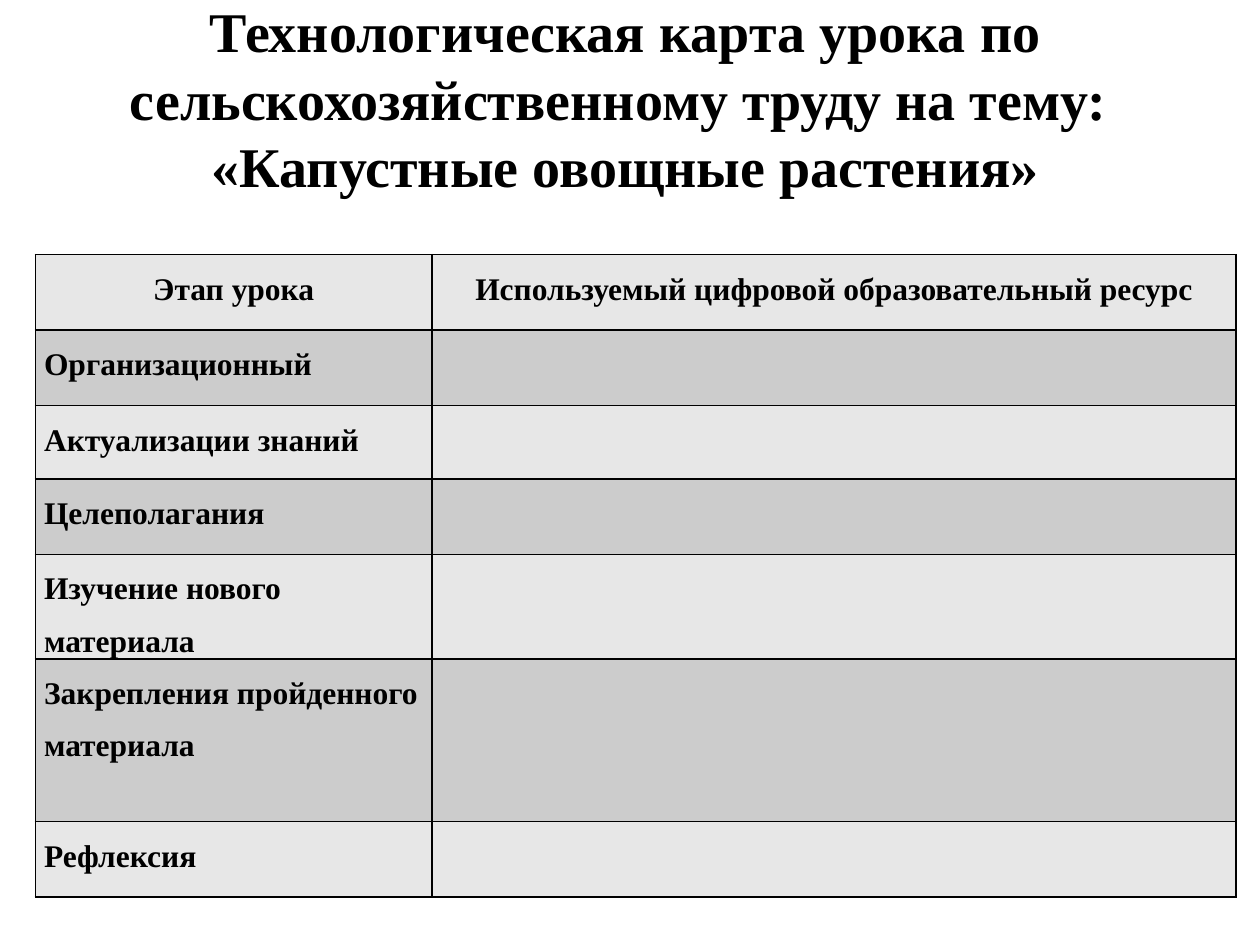
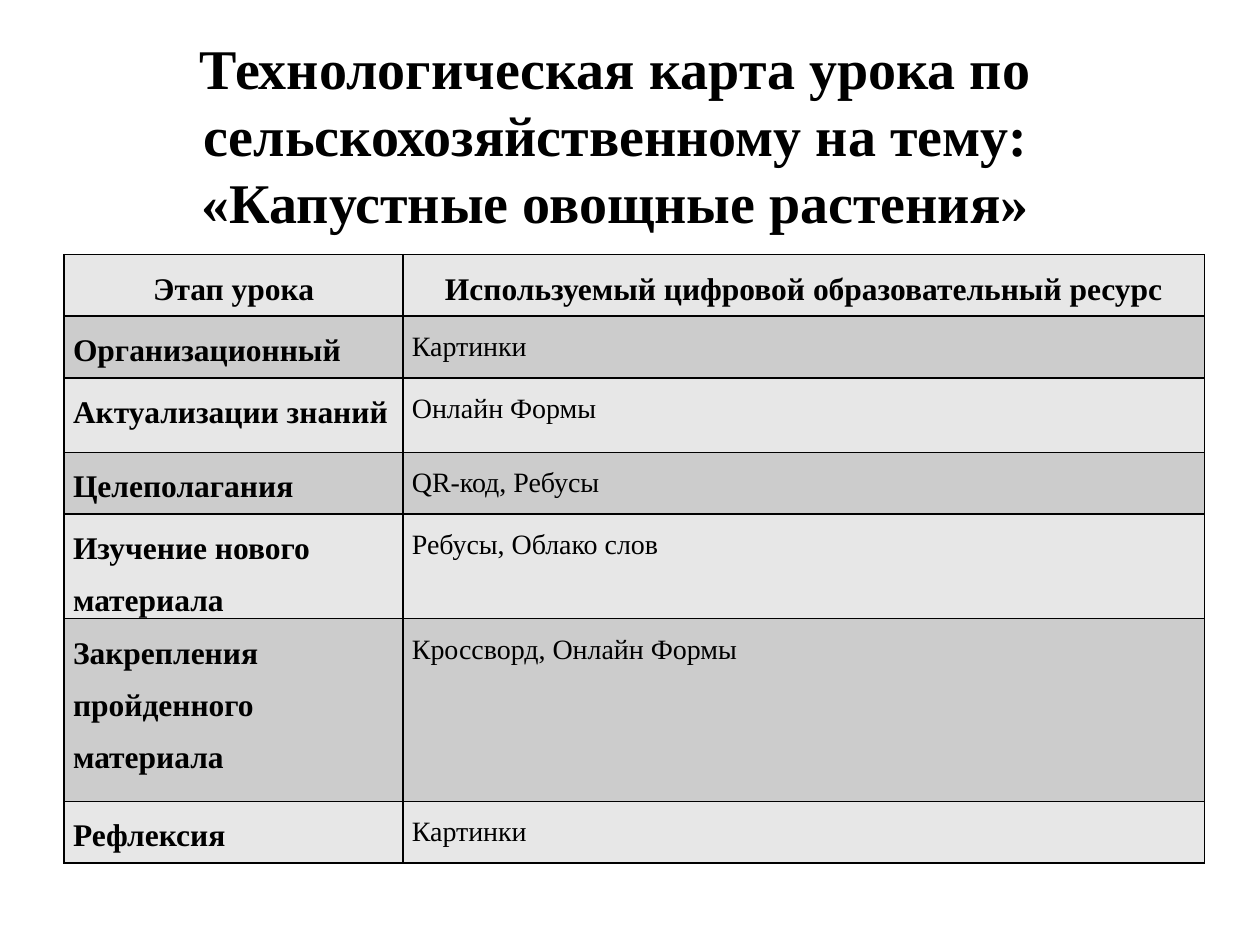
"""Build two lesson-plan slides: a blank table of stages and a completed one."""
from lxml.etree import SubElement
from pptx import Presentation
from pptx.dml.color import RGBColor
from pptx.enum.text import MSO_ANCHOR, MSO_AUTO_SIZE, PP_ALIGN
from pptx.oxml.ns import qn
from pptx.util import Inches, Pt

HEADERS = ("Этап урока", "Используемый цифровой образовательный ресурс")
STAGES = (
    "Организационный",
    "Актуализации знаний",
    "Целеполагания",
    "Изучение нового материала",
    "Закрепления пройденного материала",
    "Рефлексия",
)
SLIDES = [
    {
        "title": "Технологическая карта урока по сельскохозяйственному труду "
                 "на тему: \v«Капустные овощные растения»",
        "title_box": (0.2, 0, 9.53, 1.55),
        "table_left": 0.28,
        "columns": (3.15, 6.38),
        "rows": (0.6, 0.6, 0.58, 0.6, 0.6, 1.29, 0.6),
        "resources": ("",) * len(STAGES),
    },
    {
        "title": "Технологическая карта урока по сельскохозяйственному "
                 "на тему: «Капустные овощные растения»",
        "title_box": (0.75, 0.29, 8.27, 1.55),
        "table_left": 0.51,
        "columns": (2.69, 6.36),
        "rows": (0.49, 0.49, 0.59, 0.49, 0.49, 1.45, 0.49),
        "resources": (
            "Картинки",
            "Онлайн Формы",
            "QR-код, Ребусы",
            "Ребусы, Облако слов",
            "Кроссворд, Онлайн Формы",
            "Картинки",
        ),
    },
]
COLORS = {"text": "000000", "border": "000000", "light": "E7E7E7", "dark": "CCCCCC"}
FONT = "Times New Roman"
TABLE_TOP = 2.02


def style_text(tf, size, bold, align):
    for p in tf.paragraphs:
        p.alignment = align
        for r in p.runs:
            r.font.name = FONT
            r.font.size = Pt(size)
            r.font.bold = bold
            r.font.color.rgb = RGBColor.from_string(COLORS["text"])


def add_title(s, text, box):
    title = s.shapes.title
    title.left, title.top, title.width, title.height = map(Inches, box)
    tf = title.text_frame
    tf.text = text
    tf.word_wrap = True
    tf.auto_size = MSO_AUTO_SIZE.NONE
    tf.vertical_anchor = MSO_ANCHOR.MIDDLE
    style_text(tf, 32, True, PP_ALIGN.CENTER)


def add_borders(cell):
    tc_pr = cell._tc.get_or_add_tcPr()
    for side in ("lnL", "lnR", "lnT", "lnB"):
        line = SubElement(tc_pr, qn(f"a:{side}"), w=str(Pt(1)))
        fill = SubElement(line, qn("a:solidFill"))
        SubElement(fill, qn("a:srgbClr"), val=COLORS["border"])


def fill_cell(cell, text, row, col):
    add_borders(cell)
    cell.fill.solid()
    cell.fill.fore_color.rgb = RGBColor.from_string(COLORS["dark" if row % 2 else "light"])
    cell.margin_left = cell.margin_right = Inches(0.07)
    cell.margin_top = cell.margin_bottom = 0
    if text:
        tf = cell.text_frame
        tf.text = text
        tf.paragraphs[0].line_spacing = 1.5
        heading = row == 0 or col == 0
        align = PP_ALIGN.LEFT if row else PP_ALIGN.CENTER
        style_text(tf, 18 if heading else 16, heading, align)


def add_stage_table(s, left, columns, rows, resources):
    content = [HEADERS, *zip(STAGES, resources)]
    frame = s.shapes.add_table(
        len(rows), len(columns), Inches(left), Inches(TABLE_TOP),
        Inches(sum(columns)), Inches(sum(rows)))
    table = frame.table
    for column, width in zip(table.columns, columns):
        column.width = Inches(width)
    for row, height in zip(table.rows, rows):
        row.height = Inches(height)
    for i, texts in enumerate(content):
        for j, text in enumerate(texts):
            fill_cell(table.cell(i, j), text, i, j)


def main():
    prs = Presentation()
    prs.slide_width, prs.slide_height = Inches(10), Inches(7.5)
    title_only = prs.slide_layouts.get_by_name("Title Only")
    for plan in SLIDES:
        s = prs.slides.add_slide(title_only)
        add_title(s, plan["title"], plan["title_box"])
        add_stage_table(s, plan["table_left"], plan["columns"], plan["rows"], plan["resources"])
    prs.save("out.pptx")


if __name__ == "__main__":
    main()
